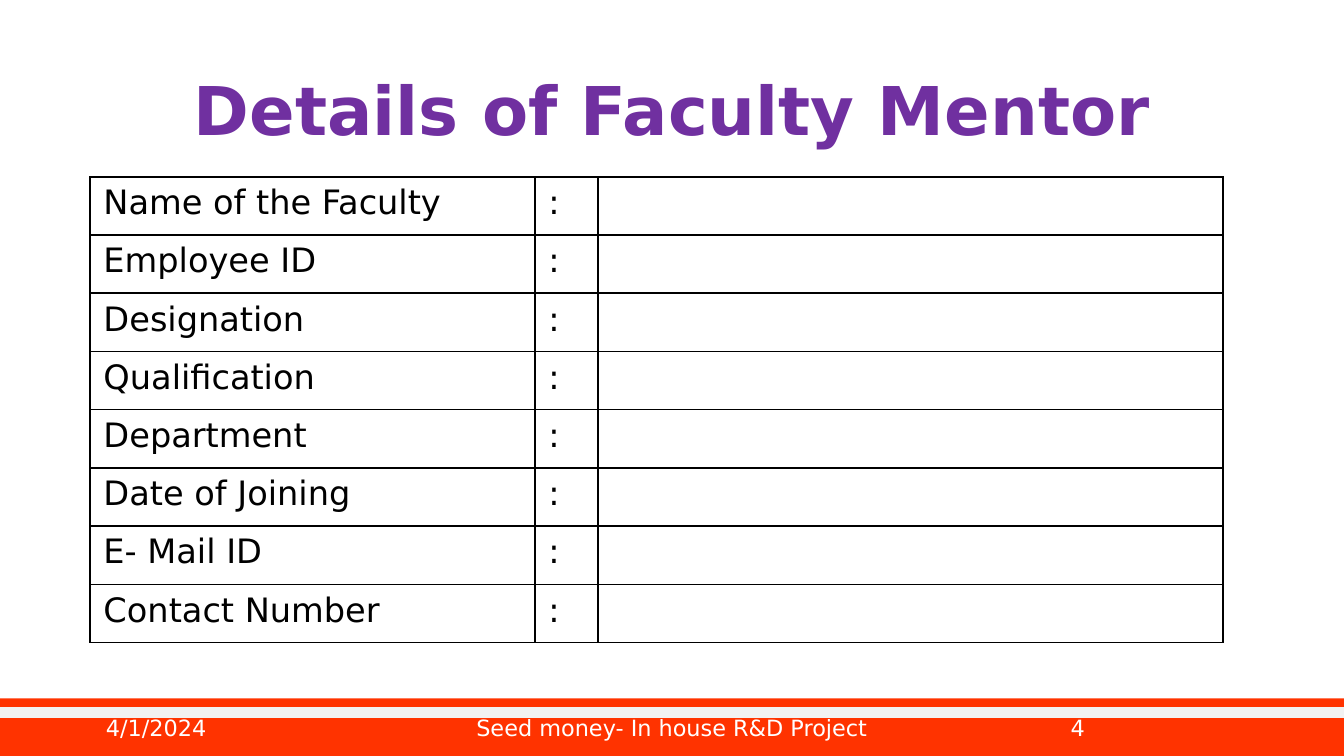
from lxml.etree import SubElement
from pptx import Presentation
from pptx.dml.color import RGBColor
from pptx.enum.shapes import MSO_CONNECTOR, MSO_SHAPE
from pptx.enum.text import MSO_ANCHOR, PP_ALIGN
from pptx.oxml import parse_xml
from pptx.oxml.ns import nsdecls, qn
from pptx.util import Inches, Pt

WIDTH = Inches(10)
HEIGHT = WIDTH * 9 // 16
COLOURS = {"title": "7030A0", "body": "000000", "footer": "FFFFFF",
           "bar": "FF3300", "stripe": "F2F2F2", "border": "000000"}
FORMATS = {
    "title": {"name": "DejaVu Sans", "size": Pt(36), "bold": True},
    "body": {"name": "DejaVu Sans", "size": Pt(18), "bold": False},
    "footer": {"name": "DejaVu Sans", "size": Pt(12), "bold": False},
}
FIELDS = ["Name of the Faculty", "Employee ID", "Designation", "Qualification",
          "Department", "Date of Joining", "E- Mail ID", "Contact Number"]
COLUMN_SHARES = [33.1, 4.7, 46.5]
ROW_SHARE = 7.7
FOOTER_TOP = 94.3


def colour(role):
    """Return the colour of a role."""
    return RGBColor.from_string(COLOURS[role])


def across(share):
    """Turn a percentage of the slide width into a length."""
    return int(WIDTH * share / 100)


def down(share):
    """Turn a percentage of the slide height into a length."""
    return int(HEIGHT * share / 100)


def style_font(font, role):
    """Apply the format and colour of a role to a font."""
    for name, value in FORMATS[role].items():
        setattr(font, name, value)
    font.color.rgb = colour(role)


def add_text(page, text, role, left, top, width, height, align, spacing=1.0):
    """Add a vertically centred line of text."""
    box = page.shapes.add_textbox(across(left), down(top), across(width), down(height))
    frame = box.text_frame
    frame.word_wrap = True
    frame.vertical_anchor = MSO_ANCHOR.MIDDLE
    para = frame.paragraphs[0]
    para.alignment = align
    para.line_spacing = spacing
    span = para.add_run()
    span.text = text
    style_font(span.font, role)


def add_footer_band(page):
    """Add the bar at the foot of the page with its pale stripe."""
    bar = page.shapes.add_shape(MSO_SHAPE.RECTANGLE, 0, down(92.4), WIDTH, down(7.6))
    bar.shadow.inherit = False
    bar.fill.solid()
    bar.fill.fore_color.rgb = colour("bar")
    bar.line.fill.background()
    stripe = page.shapes.add_connector(
        MSO_CONNECTOR.STRAIGHT, 0, down(FOOTER_TOP), WIDTH, down(FOOTER_TOP))
    stripe.line.color.rgb = colour("stripe")
    stripe.line.width = Pt(6)
    SubElement(stripe._element.spPr, qn("a:effectLst"))


def add_borders(cell):
    """Draw a thin line on all four sides of a cell."""
    properties = cell._tc.get_or_add_tcPr()
    for index, side in enumerate(["lnL", "lnR", "lnT", "lnB"]):
        properties.insert(index, parse_xml(
            f'<a:{side} {nsdecls("a")} w="{Pt(1)}"><a:solidFill>'
            f'<a:srgbClr val="{COLOURS["border"]}"/></a:solidFill></a:{side}>'))


def add_details_table(page, left, top):
    """Add the form with one row for each field."""
    table = page.shapes.add_table(
        len(FIELDS), len(COLUMN_SHARES), across(left), down(top),
        across(sum(COLUMN_SHARES)), down(ROW_SHARE * len(FIELDS))).table
    table.first_row = table.horz_banding = False
    for column, share in zip(table.columns, COLUMN_SHARES):
        column.width = across(share)
    for row, field in zip(table.rows, FIELDS):
        row.height = down(ROW_SHARE)
        for cell, text in zip(row.cells, [field, ":", ""]):
            cell.text = text
            cell.fill.background()
            style_font(cell.text_frame.paragraphs[0].font, "body")
            add_borders(cell)


def main():
    """Build the faculty mentor slide."""
    deck = Presentation()
    deck.slide_width, deck.slide_height = WIDTH, HEIGHT
    page = deck.slides.add_slide(deck.slide_layouts[6])
    add_footer_band(page)
    add_text(page, "Details of Faculty Mentor", "title",
             6.9, 5.3, 86.2, 19.4, PP_ALIGN.CENTER, 0.9)
    add_details_table(page, 6.7, 23.4)
    for text, left, width, align in [
            ("4/1/2024", 6.9, 22.5, PP_ALIGN.LEFT),
            ("Seed money- In house R&D Project", 33.1, 33.8, PP_ALIGN.CENTER),
            ("4", 70.6, 11.1, PP_ALIGN.RIGHT)]:
        add_text(page, text, "footer", left, FOOTER_TOP, width, 3.8, align)
    deck.save("out.pptx")


if __name__ == "__main__":
    main()
